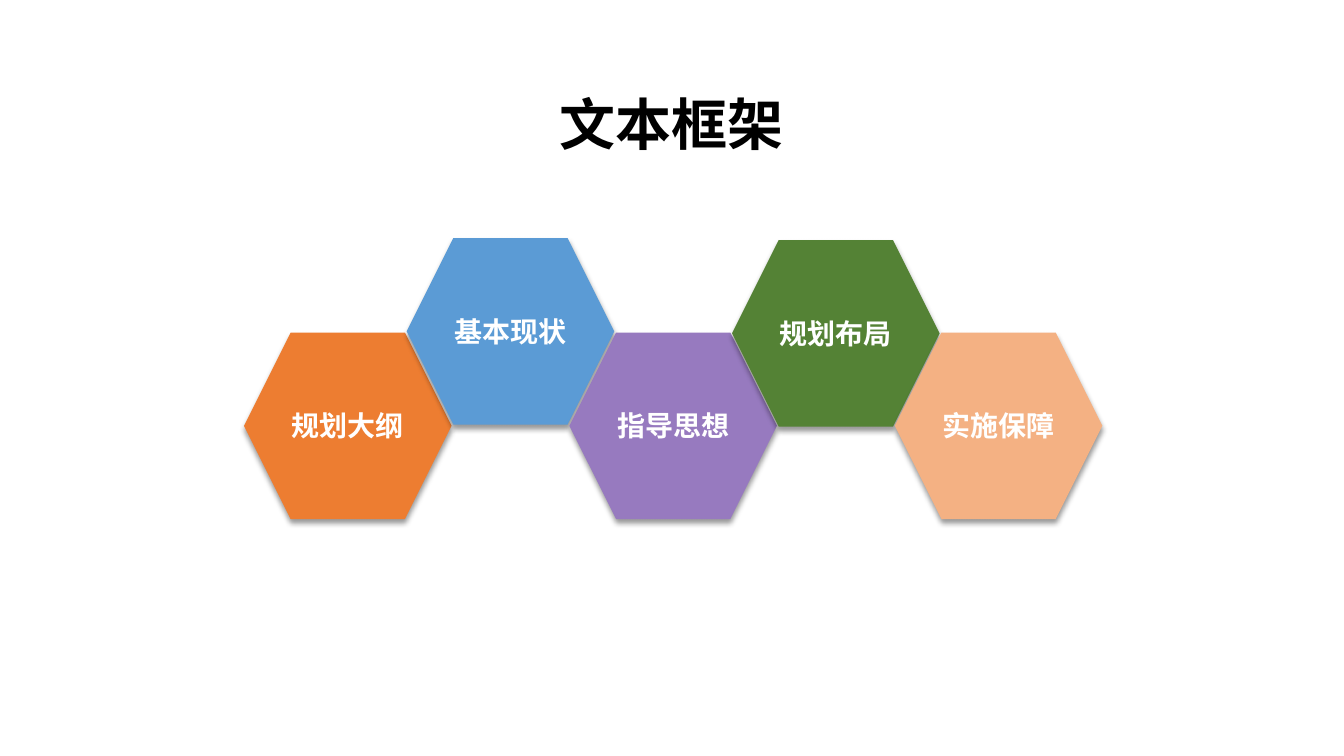
from lxml.etree import SubElement
from pptx import Presentation
from pptx.dml.color import RGBColor
from pptx.enum.shapes import MSO_SHAPE
from pptx.enum.text import MSO_ANCHOR, MSO_AUTO_SIZE, PP_ALIGN
from pptx.oxml.ns import qn
from pptx.util import Cm, Pt

BLACK = RGBColor(0x00, 0x00, 0x00)
WHITE = RGBColor(0xFF, 0xFF, 0xFF)
ORANGE = RGBColor(0xED, 0x7D, 0x31)
BLUE = RGBColor(0x5B, 0x9B, 0xD5)
PURPLE = RGBColor(0x97, 0x7A, 0xBF)
GREEN = RGBColor(0x54, 0x82, 0x35)
PEACH = RGBColor(0xF4, 0xB1, 0x83)

FACE = "Noto Sans CJK SC"
TITLE = "文本框架"
# label, fill, top in cm
PARTS = [
    ("规划大纲", ORANGE, 8.38),
    ("基本现状", BLUE, 6.0),
    ("指导思想", PURPLE, 8.38),
    ("规划布局", GREEN, 6.05),
    ("实施保障", PEACH, 8.38),
]
LEFT, PITCH = 6.15, 4.1
WIDTH, HEIGHT = 5.23, 4.7


def put_text(frame, text, size, color):
    frame.word_wrap = True
    para = frame.paragraphs[0]
    para.alignment = PP_ALIGN.CENTER
    run = para.add_run()
    run.text = text
    look = {"size": Pt(size), "bold": True, "name": FACE}
    for key, value in look.items():
        setattr(run.font, key, value)
    run.font.color.rgb = color
    SubElement(run.font._element, qn("a:ea"), typeface=FACE)


def add_shade(shape):
    """Give the shape a soft black shadow that falls downward."""
    shape.shadow.inherit = False
    effects = shape._element.spPr.find(qn("a:effectLst"))
    shade = SubElement(effects, qn("a:outerShdw"), blurRad=str(Pt(4)),
                       dist=str(Pt(3)), dir=str(83 * 60000), rotWithShape="0")
    tint = SubElement(shade, qn("a:srgbClr"), val=str(BLACK))
    SubElement(tint, qn("a:alpha"), val="40000")


def main():
    deck = Presentation()
    deck.slide_width, deck.slide_height = Cm(33.87), Cm(19.05)
    slide = deck.slides.add_slide(deck.slide_layouts[6])

    title = slide.shapes.add_textbox(Cm(11.73), Cm(2.13), Cm(10.39), Cm(1.96))
    put_text(title.text_frame, TITLE, 40, BLACK)
    title.text_frame.auto_size = MSO_AUTO_SIZE.SHAPE_TO_FIT_TEXT

    group = slide.shapes.add_group_shape()
    for i, (label, fill, top) in enumerate(PARTS):
        cell = group.shapes.add_shape(
            MSO_SHAPE.HEXAGON, Cm(LEFT + i * PITCH), Cm(top), Cm(WIDTH), Cm(HEIGHT))
        cell.fill.solid()
        cell.fill.fore_color.rgb = fill
        cell.line.fill.background()
        add_shade(cell)
        frame = cell.text_frame
        frame.vertical_anchor = MSO_ANCHOR.MIDDLE
        put_text(frame, label, 20, WHITE)

    deck.save("out.pptx")


if __name__ == "__main__":
    main()
